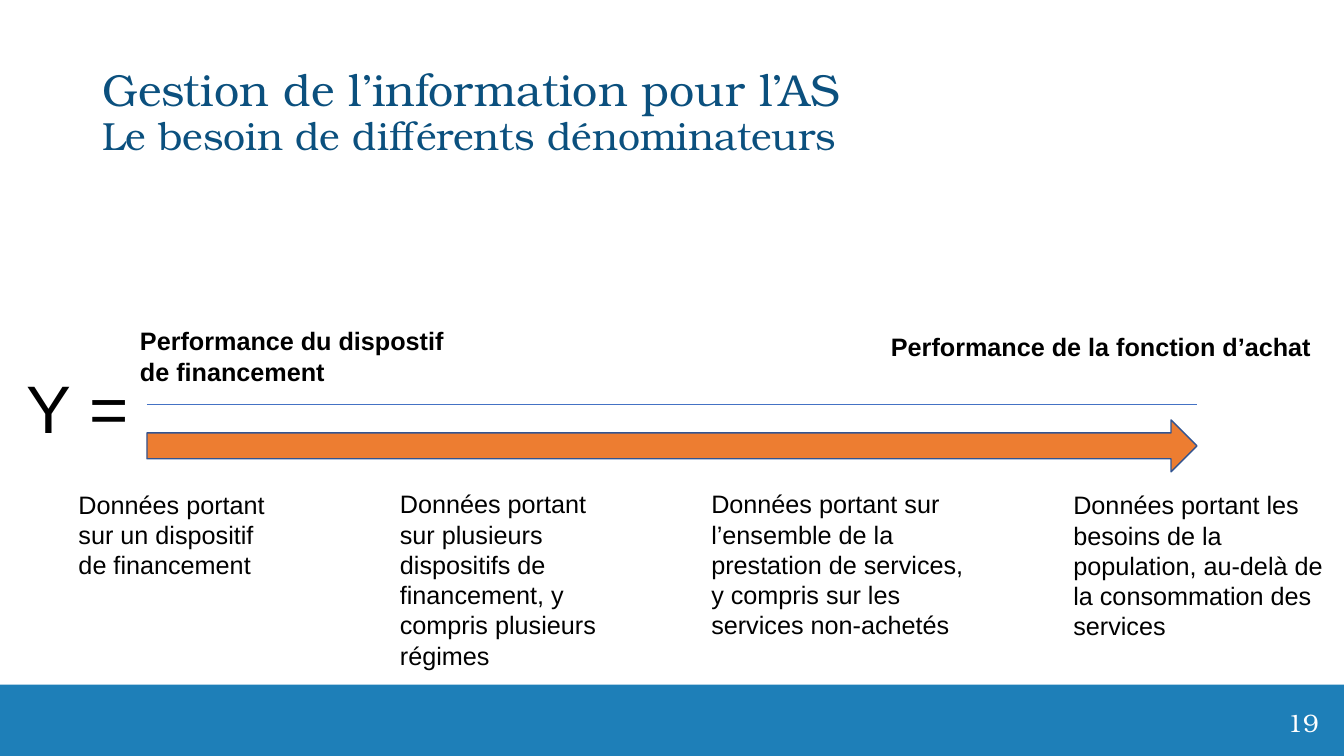
from pptx import Presentation
from pptx.dml.color import RGBColor
from pptx.enum.shapes import MSO_CONNECTOR as Link, MSO_SHAPE as Shape
from pptx.enum.text import MSO_ANCHOR as Anchor, MSO_AUTO_SIZE as Fit, PP_ALIGN as Align
from pptx.oxml.ns import qn
from pptx.util import Pt

BLACK = RGBColor(0x00, 0x00, 0x00)
WHITE = RGBColor(0xFF, 0xFF, 0xFF)
NAVY = RGBColor(0x0B, 0x50, 0x7E)
BAND = RGBColor(0x1E, 0x7F, 0xB8)
ORANGE = RGBColor(0xED, 0x7D, 0x31)
EDGE = RGBColor(0x32, 0x54, 0x91)
RULE = RGBColor(0x44, 0x72, 0xC4)
SERIF = "TeX Gyre Bonum"

deck = Presentation()
deck.slide_width, deck.slide_height = Pt(960), Pt(540)
slide = deck.slides.add_slide(deck.slide_layouts[6])
shapes = slide.shapes


def add_text(text, left, top, width, height, size=18, font="Arial", color=BLACK,
             bold=False, wrap=True, align=Align.LEFT, fit=Fit.SHAPE_TO_FIT_TEXT):
    box = shapes.add_textbox(Pt(left), Pt(top), Pt(width), Pt(height))
    frame = box.text_frame
    frame.text = text
    frame.word_wrap = wrap
    frame.auto_size = fit
    for para in frame.paragraphs:
        para.alignment = align
        for run in para.runs:
            run.font.size = Pt(size)
            run.font.name = font
            run.font.bold = bold
            run.font.color.rgb = color
    return frame


# Footer band and page number
band = shapes.add_shape(Shape.RECTANGLE, Pt(0), Pt(489), Pt(960), Pt(51))
band.shadow.inherit = False
band.fill.solid()
band.fill.fore_color.rgb = BAND
band.line.fill.background()
add_text("19", 897, 502, 52, 29, font=SERIF, color=WHITE, align=Align.RIGHT)

# Title with a smaller second line
title = add_text("Gestion de l’information pour l’AS\vLe besoin de différents dénominateurs",
                 66, 28.8, 828, 104.4, size=32, font=SERIF, color=NAVY, fit=Fit.NONE)
title.vertical_anchor = Anchor.MIDDLE
head = title.paragraphs[0]
head.line_spacing = 0.9
head.runs[1].font.size = Pt(28)

# Fraction line
rule = shapes.add_connector(Link.STRAIGHT, Pt(105), Pt(289), Pt(855), Pt(289))
rule.line.color.rgb = RULE
rule.line.width = Pt(0.5)
props = rule._element.spPr
props.append(props.makeelement(qn("a:effectLst"), {}))

# Arrow from scheme to purchasing
arrow = shapes.add_shape(Shape.RIGHT_ARROW, Pt(105), Pt(300), Pt(750), Pt(37))
arrow.shadow.inherit = False
arrow.fill.solid()
arrow.fill.fore_color.rgb = ORANGE
arrow.line.color.rgb = EDGE
arrow.line.width = Pt(1)

# Left side of the equation and the two ends of the scale
add_text("Y =", 12.2, 258, 101.5, 65.5, size=48, wrap=False)
add_text("Performance du dispostif\nde financement", 92.9, 229, 239, 51, bold=True, wrap=False)
add_text("Performance de la fonction d’achat", 629.3, 233.3, 317.5, 29, bold=True, wrap=False)

# Denominators under the arrow
denoms = [
    (49, 345.6, 163, 73, "Données portant sur un dispositif de financement"),
    (278.6, 345.6, 163, 138, "Données portant sur plusieurs dispositifs de financement, "
                             "y compris plusieurs régimes"),
    (501, 345.6, 199, 117, "Données portant sur l’ensemble de la prestation de services, "
                           "y compris sur les services non-achetés"),
    (759.6, 346.3, 199, 117, "Données portant les besoins de la population, "
                             "au-delà de la consommation des services"),
]
for left, top, width, height, text in denoms:
    add_text(text, left, top, width, height)

deck.save("out.pptx")
